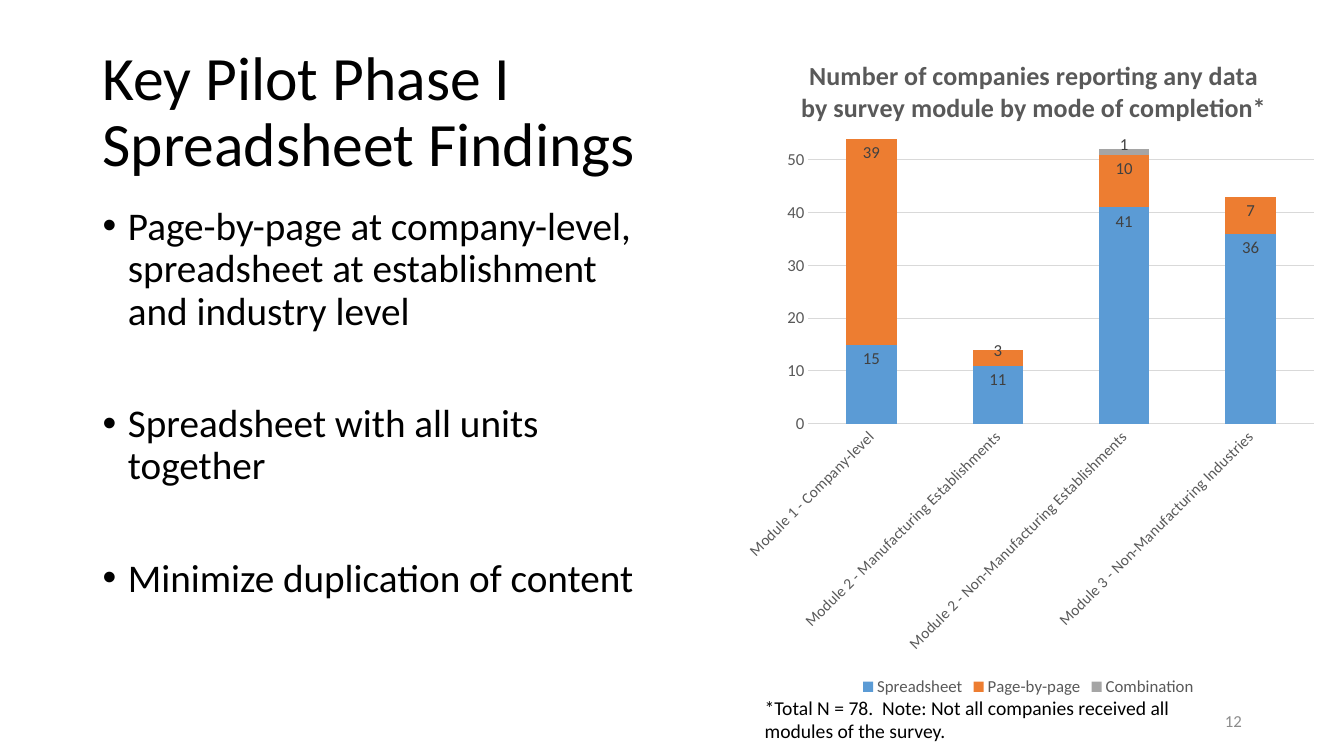
"""Build the slide of key spreadsheet findings from pilot phase I."""
from dataclasses import dataclass
from typing import Any

from lxml.etree import SubElement
from pptx import Presentation
from pptx.chart.data import CategoryChartData
from pptx.dml.color import RGBColor
from pptx.enum.chart import XL_CHART_TYPE as ChartType
from pptx.enum.chart import XL_LABEL_POSITION as LabelPos
from pptx.enum.chart import XL_LEGEND_POSITION as LegendPos
from pptx.enum.chart import XL_TICK_MARK as TickMark
from pptx.enum.text import MSO_ANCHOR as Anchor
from pptx.enum.text import MSO_AUTO_SIZE as AutoSize
from pptx.enum.text import PP_ALIGN as Align
from pptx.oxml.ns import qn
from pptx.util import Cm, Pt


@dataclass(frozen=True)
class Theme:
    font: str = "Calibri"
    ink: str = "000000"
    label: str = "404040"
    chart_text: str = "595959"
    page: str = "8C8C8C"
    rule: str = "D9D9D9"
    title_size: float = 44
    body_size: float = 28
    chart_title_size: float = 18.6
    note_size: float = 14
    small_size: float = 12
    category_size: float = 11


@dataclass(frozen=True)
class Box:
    left: float
    top: float
    width: float
    height: float

    def lengths(self) -> tuple[Cm, Cm, Cm, Cm]:
        return Cm(self.left), Cm(self.top), Cm(self.width), Cm(self.height)


@dataclass(frozen=True)
class Mode:
    name: str
    counts: tuple[int, ...]
    color: str
    label_all: bool = True
    raised_point: int | None = None
    raise_by: float = 0


THEME = Theme()
MODULES = (
    "Module 1 - Company-level",
    "Module 2 - Manufacturing Establishments",
    "Module 2 - Non-Manufacturing Establishments",
    "Module 3 - Non-Manufacturing Industries",
)
MODES = (
    Mode("Spreadsheet", (15, 11, 41, 36), "5B9BD5"),
    Mode("Page-by-page", (39, 3, 10, 7), "ED7D31", True, 1, -0.02),
    Mode("Combination", (0, 0, 1, 0), "A5A5A5", False, 2, -0.01),
)
FINDINGS = (
    "Page-by-page at company-level, spreadsheet at establishment and industry level",
    "Spreadsheet with all units together",
    "Minimize duplication of content",
)


def style(font: Any, size: float, color: str, bold: bool = False) -> None:
    font.name, font.size, font.bold = THEME.font, Pt(size), bold
    font.color.rgb = RGBColor.from_string(color)


def move(shape: Any, box: Box) -> None:
    shape.left, shape.top, shape.width, shape.height = box.lengths()


def set_layout(parent: Any, index: int, **settings: Any) -> None:
    for old in parent.findall(qn("c:layout")):
        parent.remove(old)
    layout = SubElement(parent, qn("c:layout"))
    manual = SubElement(layout, qn("c:manualLayout"))
    for tag, value in settings.items():
        SubElement(manual, qn(f"c:{tag}")).set("val", str(value))
    parent.insert(index, layout)


def add_title(slide: Any) -> None:
    title = slide.shapes.title
    move(title, Box(2.33, 1.02, 29.21, 3.68))
    frame = title.text_frame
    frame.text = "Key Pilot Phase I\vSpreadsheet Findings"
    frame.auto_size, frame.vertical_anchor = AutoSize.NONE, Anchor.MIDDLE
    heading = frame.paragraphs[0]
    heading.alignment, heading.line_spacing = Align.LEFT, 0.9
    style(heading.font, THEME.title_size, THEME.ink)


def add_findings(slide: Any) -> None:
    body = slide.placeholders[1]
    move(body, Box(2.33, 5.08, 14.4, 12.09))
    frame = body.text_frame
    frame.text = "\n".join(FINDINGS)
    frame.auto_size = AutoSize.NONE
    for number, finding in enumerate(frame.paragraphs):
        finding.line_spacing = 0.9
        finding.space_before = Pt(50 if number else 0)
        properties = finding._p.get_or_add_pPr()
        properties.set("marL", str(Cm(0.64)))
        properties.set("indent", str(-Cm(0.64)))
        SubElement(properties, qn("a:buFont")).set("typeface", "Arial")
        SubElement(properties, qn("a:buChar")).set("char", "•")
        style(finding.font, THEME.body_size, THEME.ink)


def add_text(slide: Any, text: str, box: Box, size: float, color: str,
             align: Align = Align.LEFT, anchor: Anchor = Anchor.TOP) -> None:
    frame = slide.shapes.add_textbox(*box.lengths()).text_frame
    frame.word_wrap, frame.vertical_anchor = True, anchor
    frame.text = text
    frame.paragraphs[0].alignment = align
    style(frame.paragraphs[0].font, size, color)


def format_mode(series: Any, mode: Mode) -> None:
    series.format.fill.solid()
    series.format.fill.fore_color.rgb = RGBColor.from_string(mode.color)
    position = LabelPos.INSIDE_END if mode.label_all else LabelPos.CENTER
    labels = series.data_labels
    labels.show_value, labels.position = mode.label_all, position
    style(labels.font, THEME.small_size, THEME.label)
    if mode.raised_point is not None:
        raised = series.points[mode.raised_point].data_label
        raised.position = position
        style(raised.font, THEME.small_size, THEME.label)
        set_layout(series._element.xpath(".//c:dLbl")[0], 1, x=0, y=mode.raise_by)


def format_axes(chart: Any) -> None:
    modules, counts = chart.category_axis, chart.value_axis
    for axis, size in ((modules, THEME.category_size), (counts, THEME.small_size)):
        axis.major_tick_mark = axis.minor_tick_mark = TickMark.NONE
        style(axis.tick_labels.font, size, THEME.chart_text)
    modules._element.xpath("c:txPr/a:bodyPr")[0].set("rot", "-2700000")
    counts.minimum_scale, counts.maximum_scale, counts.major_unit = 0, 55, 10
    counts.has_major_gridlines = True
    counts.format.line.fill.background()
    for line in (modules.format.line, counts.major_gridlines.format.line):
        line.width = Pt(0.75)
        line.color.rgb = RGBColor.from_string(THEME.rule)


def add_mode_chart(slide: Any) -> None:
    data = CategoryChartData(number_format="0")
    data.categories = MODULES
    for mode in MODES:
        data.add_series(mode.name, mode.counts)
    chart = slide.shapes.add_chart(
        ChartType.COLUMN_STACKED, *Box(18.42, 0.64, 14.99, 17.02).lengths(), data).chart
    style(chart.font, 10, THEME.ink)
    chart.has_title = True
    heading = chart.chart_title.text_frame
    heading.text = "Number of companies reporting any data by survey module by mode of completion*"
    style(heading.paragraphs[0].font, THEME.chart_title_size, THEME.chart_text, True)
    set_layout(chart.chart_title._element, 1, xMode="edge", yMode="edge", x=0.11, y=0.04)
    chart.has_legend = True
    chart.legend.position, chart.legend.include_in_layout = LegendPos.BOTTOM, False
    style(chart.legend.font, THEME.small_size, THEME.chart_text)
    plot = chart.plots[0]
    plot.gap_width, plot.overlap, plot.vary_by_categories = 150, 100, False
    for series, mode in zip(plot.series, MODES):
        format_mode(series, mode)
    format_axes(chart)
    set_layout(chart._chartSpace.xpath("c:chart/c:plotArea")[0], 0, layoutTarget="inner",
               xMode="edge", yMode="edge", x=0.13, y=0.16, w=0.85, h=0.43)


def main() -> None:
    deck = Presentation()
    deck.slide_width, deck.slide_height = Cm(33.87), Cm(19.05)
    slide = deck.slides.add_slide(deck.slide_layouts[1])
    add_title(slide)
    add_findings(slide)
    add_text(slide, "12", Box(23.93, 17.65, 7.62, 1.01), THEME.small_size, THEME.page,
             Align.RIGHT, Anchor.MIDDLE)
    add_mode_chart(slide)
    add_text(slide, "*Total N = 78.  Note: Not all companies received all modules of the survey.",
             Box(19.02, 17.4, 11.79, 1.45), THEME.note_size, THEME.ink)
    deck.save("out.pptx")


if __name__ == "__main__":
    main()
